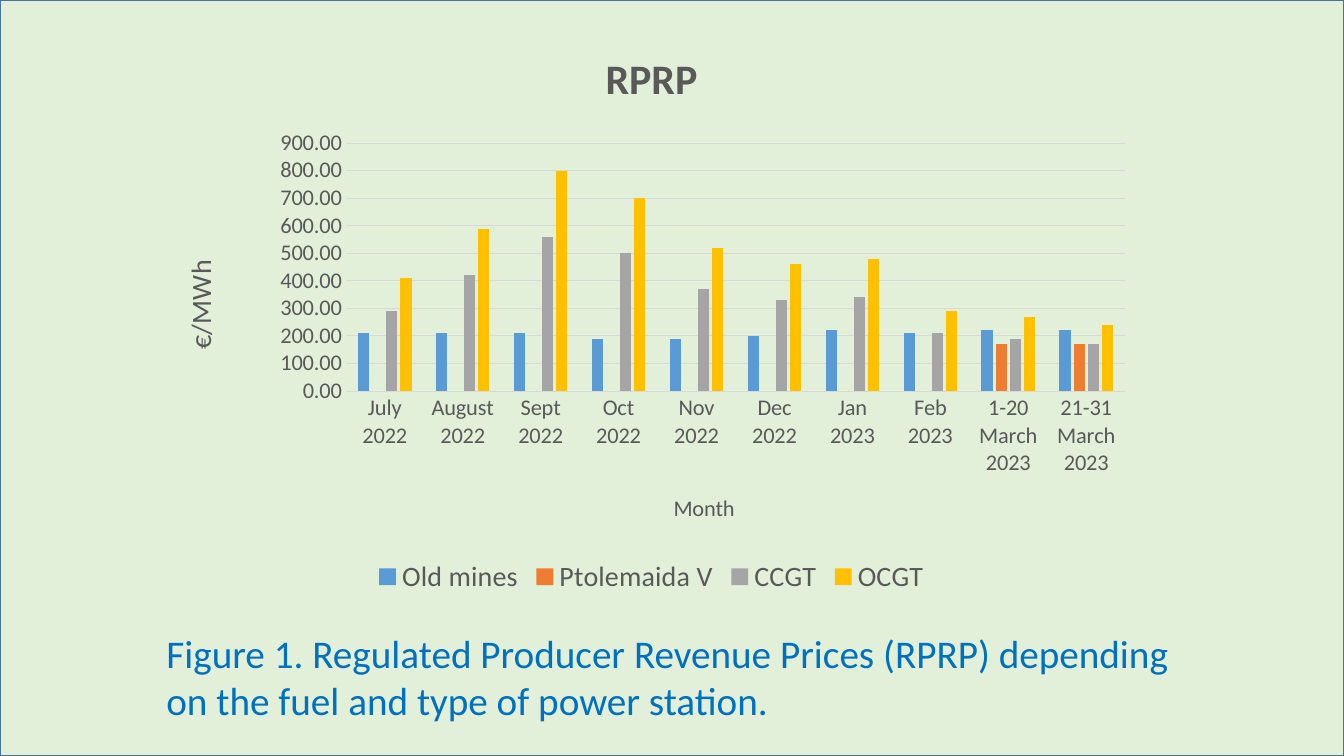
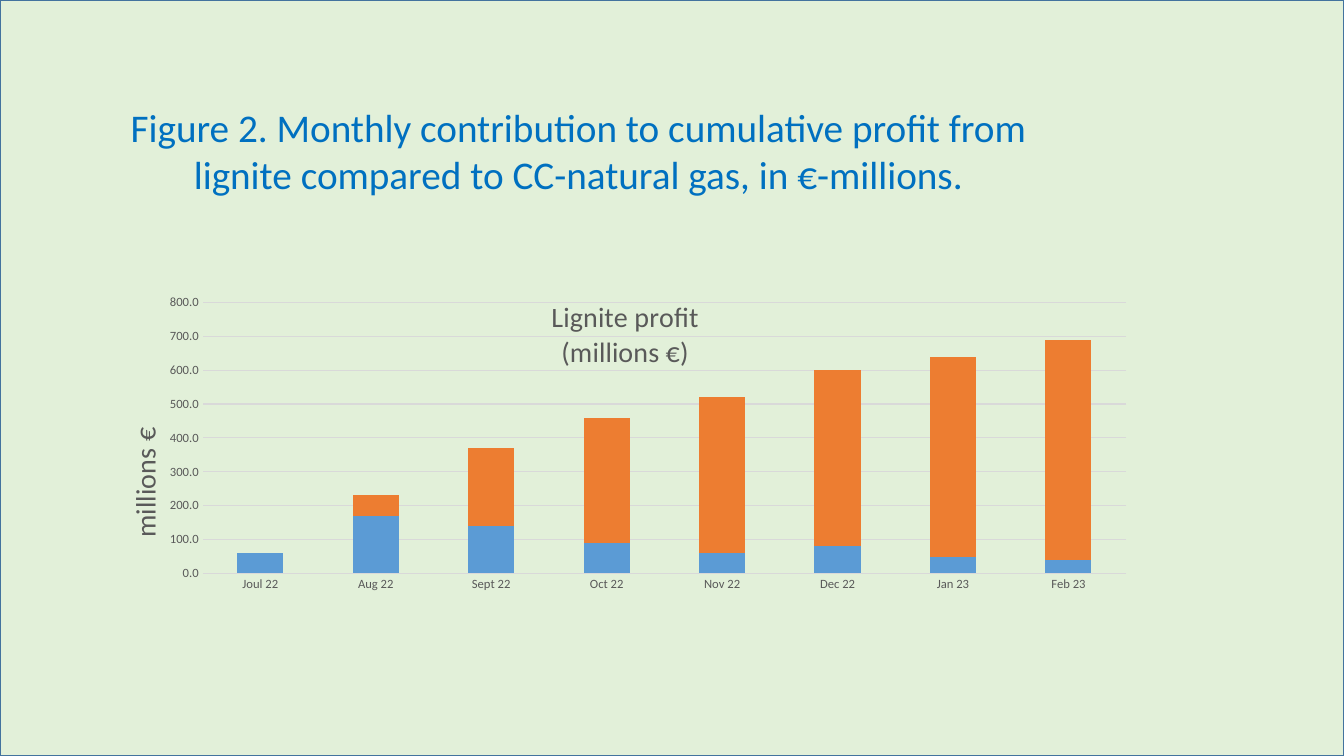
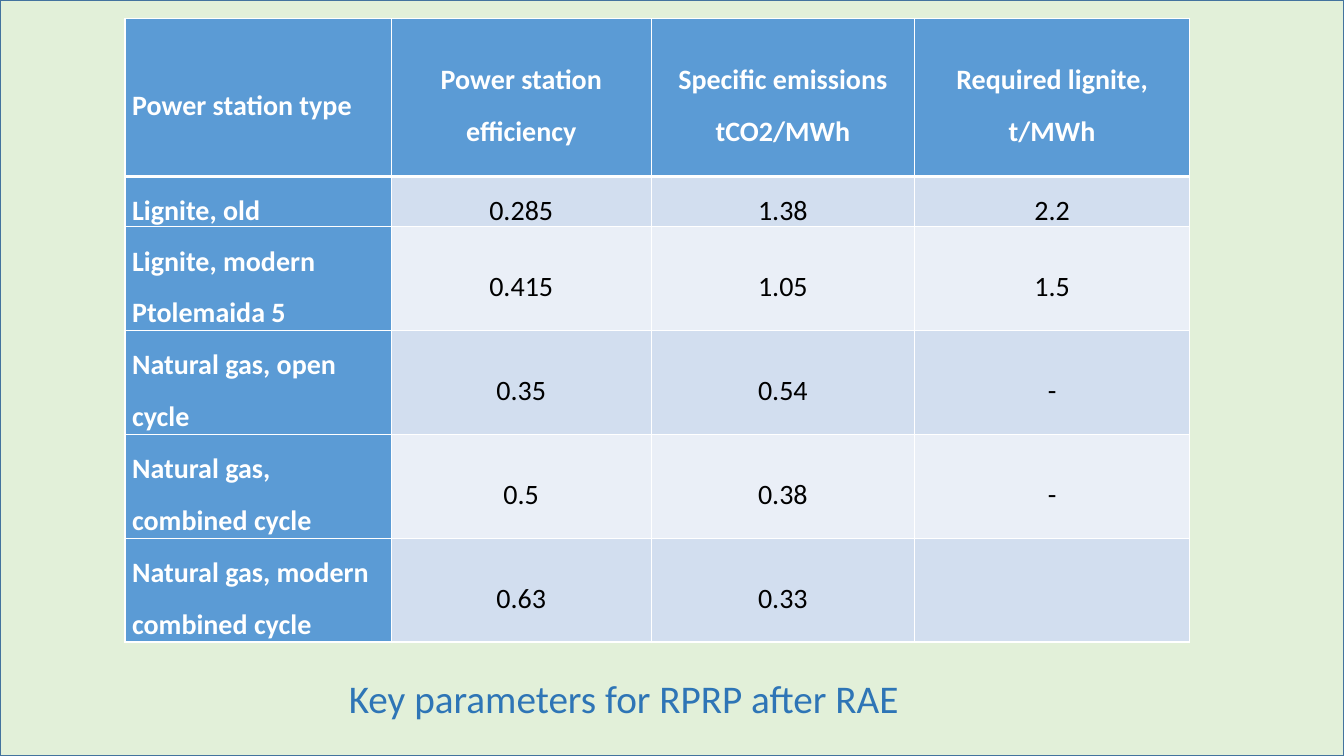
import pptx
import pptx.chart.data
import pptx.dml.color
import pptx.enum.chart
import pptx.enum.shapes
import pptx.enum.text
import pptx.oxml
import pptx.oxml.ns
import pptx.util

Inches = pptx.util.Inches
Pt = pptx.util.Pt
qn = pptx.oxml.ns.qn
KINDS = pptx.enum.chart.XL_CHART_TYPE
LEFT = pptx.enum.text.PP_ALIGN.LEFT
MID = pptx.enum.text.PP_ALIGN.CENTER

FONT = "Calibri"
HUES = {
    "page": "E2F0D9", "edge": "43739E", "head": "0070C0", "note": "2E75B6",
    "text": "595959", "grid": "D9D9D9", "blue": "5B9BD5", "red": "ED7D31",
    "gray": "A5A5A5", "gold": "FFC000", "dark": "D2DEEF", "pale": "EAEFF7",
    "white": "FFFFFF", "black": "000000",
}


def hue(name):
    return pptx.dml.color.RGBColor.from_string(HUES[name])


def style(font, size, color, bold=False):
    font.name = FONT
    font.size = Pt(size)
    font.bold = bold
    font.color.rgb = hue(color)


def write(para, text, size, color, bold=False, align=None):
    para.alignment = align
    run = para.add_run()
    run.text = text
    style(run.font, size, color, bold)


def paint(deck, slide, layout):
    page = slide.shapes.add_shape(
        pptx.enum.shapes.MSO_SHAPE.RECTANGLE, 0, 0, deck.slide_width, deck.slide_height)
    page.shadow.inherit = False
    page.fill.solid()
    page.fill.fore_color.rgb = hue("page")
    page.line.color.rgb = hue("edge")
    page.line.width = Pt(1)
    page.element.nvSpPr.cNvPr.set("id", "20")
    layout.shapes.element.insert(2, page.element)


def label(slide, text, box, color="head", align=LEFT):
    title = slide.shapes.title
    title.left, title.top, title.width, title.height = map(Inches, box)
    frame = title.text_frame
    frame.word_wrap = True
    frame.vertical_anchor = pptx.enum.text.MSO_ANCHOR.TOP
    frame.auto_size = pptx.enum.text.MSO_AUTO_SIZE.SHAPE_TO_FIT_TEXT
    write(frame.paragraphs[0], text, 28, color, align=align)


def place(node, index, spot, size):
    for old in node.findall(qn("c:layout")):
        node.remove(old)
    tags = [("layoutTarget", "inner")] if len(spot) == 4 else []
    tags += [("xMode", "edge"), ("yMode", "edge")]
    tags += [(tag, val / full) for tag, val, full in zip("xywh", spot, size * 2)]
    body = "".join(f'<c:{tag} val="{val}"/>' for tag, val in tags)
    space = pptx.oxml.ns.nsdecls("c")
    node.insert(index, pptx.oxml.parse_xml(
        f"<c:layout {space}><c:manualLayout>{body}</c:manualLayout></c:layout>"))


def head(title, lines, size, spot, area, bold=False, turn=False):
    frame = title.text_frame
    for count, line in enumerate(lines):
        para = frame.add_paragraph() if count else frame.paragraphs[0]
        write(para, line, size, "text", bold)
    if turn:
        body = title.element.find(".//" + qn("a:bodyPr"))
        body.set("rot", "-5400000")
        body.set("vert", "horz")
    place(title.element, 1, spot, area)


def rule(line):
    line.color.rgb = hue("grid")
    line.width = Pt(0.75)


def graph(slide, kind, box, cats, rows, spot, gap, lap, size, top, form):
    data = pptx.chart.data.CategoryChartData()
    data.categories = cats
    for name, color, vals in rows:
        data.add_series(name, vals)
    chart = slide.shapes.add_chart(kind, *map(Inches, box), data).chart
    style(chart.font, size, "text")
    plot = chart.plots[0]
    plot.gap_width, plot.overlap, plot.vary_by_categories = gap, lap, False
    for item, (name, color, vals) in zip(plot.series, rows):
        item.format.fill.solid()
        item.format.fill.fore_color.rgb = hue(color)
        item.invert_if_negative = False
    for axis in (chart.category_axis, chart.value_axis):
        axis.major_tick_mark = pptx.enum.chart.XL_TICK_MARK.NONE
        style(axis.tick_labels.font, size, "text")
    rule(chart.category_axis.format.line)
    axis = chart.value_axis
    axis.minimum_scale, axis.maximum_scale, axis.major_unit = 0, top, 100
    axis.format.line.fill.background()
    axis.has_major_gridlines = True
    rule(axis.major_gridlines.format.line)
    axis.tick_labels.number_format = form
    axis.tick_labels.number_format_is_linked = False
    place(chart.element.find(".//" + qn("c:plotArea")), 0, spot, box[2:])
    chart.has_legend = False
    return chart


def legend(chart):
    chart.has_legend = True
    chart.legend.position = pptx.enum.chart.XL_LEGEND_POSITION.BOTTOM
    chart.legend.include_in_layout = False
    style(chart.legend.font, 20, "text")


def border(cell, sides):
    part = cell.get_or_add_tcPr()
    space = pptx.oxml.ns.nsdecls("a")
    for index, (side, width) in enumerate(sides):
        part.insert(index, pptx.oxml.parse_xml(
            f'<a:ln{side} {space} w="{Pt(width)}"><a:solidFill>'
            f'<a:srgbClr val="{HUES["white"]}"/></a:solidFill></a:ln{side}>'))


def grid(slide, spot, wide, tall, rows):
    frame = slide.shapes.add_table(
        len(rows), len(wide), *map(Inches, spot), Inches(sum(wide)), Inches(sum(tall)))
    table = frame.table
    for col, size in zip(table.columns, wide):
        col.width = Inches(size)
    for row, size in zip(table.rows, tall):
        row.height = Inches(size)
    for y, row in enumerate(rows):
        for x, text in enumerate(row):
            cell = table.cell(y, x)
            lead = y == 0 or x == 0
            cell.fill.solid()
            cell.fill.fore_color.rgb = hue("blue" if lead else "dark" if y % 2 else "pale")
            cell.vertical_anchor = pptx.enum.text.MSO_ANCHOR.MIDDLE
            cell.margin_left = cell.margin_right = Inches(0.07)
            cell.margin_top = cell.margin_bottom = 0
            if text:
                para = cell.text_frame.paragraphs[0]
                para.line_spacing = 1.5
                write(para, text, 20, "white" if lead else "black", lead, MID if x else LEFT)
    for index, cell in enumerate(frame.element.iter(qn("a:tc"))):
        y = index // len(wide)
        border(cell, [("L", 1), ("R", 1), ("T", 3 if y == 1 else 1), ("B", 1 if y else 3)])


def prices(slide):
    label(slide, "Figure 1. Regulated Producer Revenue Prices (RPRP) depending on "
          "the fuel and type of power station.", (1.55, 6.19, 10.45, 1.04))
    cats = ["July 2022", "August 2022", "Sept 2022", "Oct 2022", "Nov 2022", "Dec 2022",
            "Jan 2023", "Feb 2023", "1-20 March 2023", "21-31 March 2023"]
    rows = [
        ("Old mines", "blue", [210, 210, 210, 190, 190, 200, 220, 210, 220, 220]),
        ("Ptolemaida V", "red", [None] * 8 + [170, 170]),
        ("CCGT", "gray", [290, 420, 560, 500, 370, 330, 340, 210, 190, 170]),
        ("OCGT", "gold", [410, 590, 800, 700, 520, 460, 480, 290, 270, 240]),
    ]
    box = (1.55, 0.25, 9.82, 5.7)
    area = box[2:]
    chart = graph(slide, KINDS.COLUMN_CLUSTERED, box, cats, rows,
                  (1.88, 1.17, 7.73, 2.46), 219, -27, 16, 900, "0.00")
    head(chart.chart_title, ["RPRP"], 30, (4.38, 0.17), area, bold=True)
    head(chart.category_axis.axis_title, ["Month"], 16, (5.09, 4.6), area)
    head(chart.value_axis.axis_title, ["€/MWh"], 20, (0.19, 2.28), area, turn=True)
    legend(chart)


def profit(slide):
    label(slide, "Figure 2. Monthly contribution to cumulative profit from lignite "
          "compared to CC-natural gas, in €-millions.", (0.95, 0.97, 9.57, 1.04), align=MID)
    cats = ["Joul 22", "Aug 22", "Sept 22", "Oct 22", "Nov 22", "Dec 22", "Jan 23", "Feb 23"]
    rows = [
        ("Monthly", "blue", [60, 170, 140, 90, 60, 80, 50, 40]),
        ("Cumulative", "red", [0, 60, 230, 370, 460, 520, 590, 650]),
    ]
    box = (0.38, 2.02, 11.3, 5.16)
    area = box[2:]
    chart = graph(slide, KINDS.COLUMN_STACKED, box, cats, rows,
                  (1.63, 0.98, 9.16, 2.69), 150, 100, 9, 800, "0.0")
    head(chart.chart_title, ["Lignite profit", "(millions €)"], 20, (5.06, 0.91), area)
    head(chart.value_axis.axis_title, ["millions €"], 20, (0.81, 2.17), area, turn=True)


def params(slide):
    label(slide, "Key parameters for RPRP after RAE", (3.36, 6.64, 5.74, 0.57), "note")
    rows = [
        ("Power station type", "Power station efficiency",
         "Specific emissions tCO2/MWh", "Required lignite, t/MWh"),
        ("Lignite, old", "0.285", "1.38", "2.2"),
        ("Lignite, modern Ptolemaida 5", "0.415", "1.05", "1.5"),
        ("Natural gas, open cycle", "0.35", "0.54", "-"),
        ("Natural gas, combined cycle", "0.5", "0.38", "-"),
        ("Natural gas, modern combined cycle", "0.63", "0.33", ""),
    ]
    grid(slide, (1.24, 0.18), [2.64, 2.58, 2.61, 2.73], [1.57, 0.48] + [1.03] * 4, rows)


def main():
    deck = pptx.Presentation()
    deck.slide_width, deck.slide_height = Inches(13.33), Inches(7.5)
    layout = deck.slide_layouts[5]
    for build in (prices, profit, params):
        build(deck.slides.add_slide(layout))
    paint(deck, deck.slides[0], layout)
    deck.save("out.pptx")


if __name__ == "__main__":
    main()
